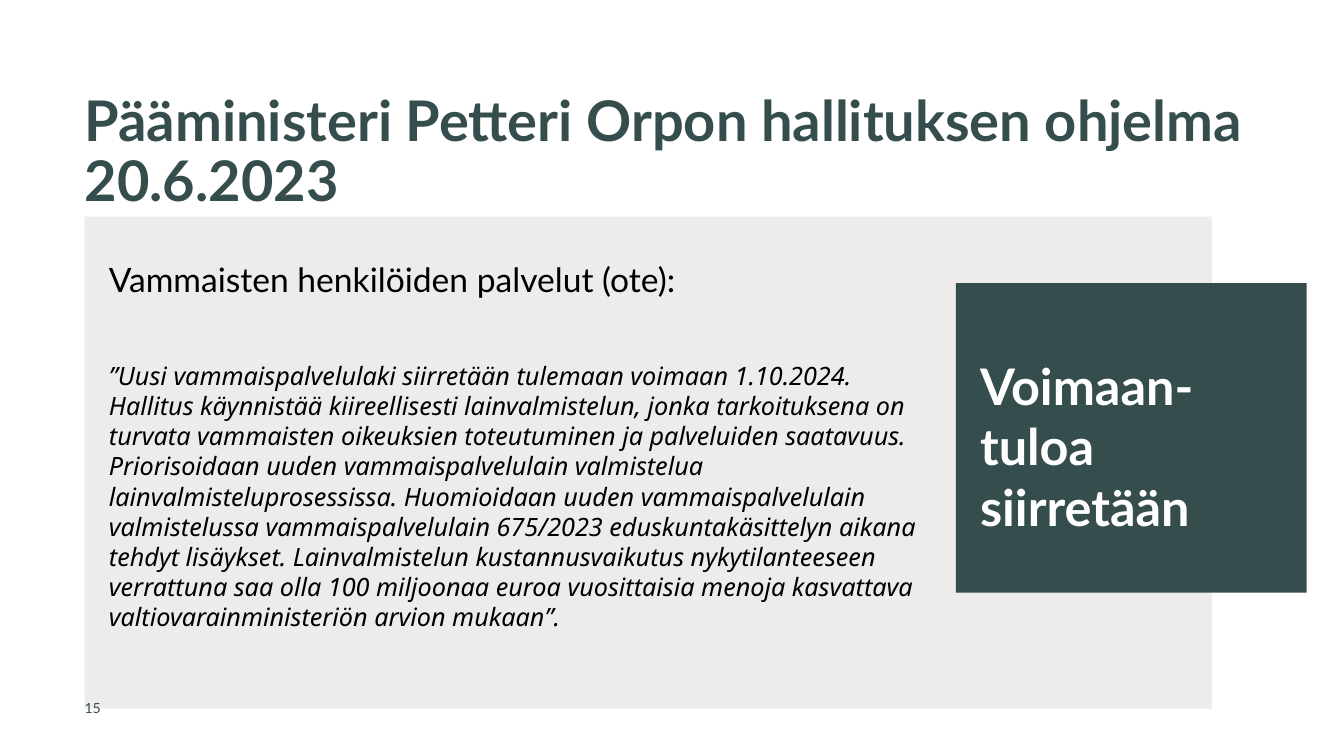
"""Builds the slide on the government programme and disability services."""
from dataclasses import dataclass

from lxml import etree
from pptx import Presentation
from pptx.dml.color import RGBColor
from pptx.enum.shapes import MSO_SHAPE
from pptx.enum.text import MSO_ANCHOR, PP_ALIGN
from pptx.oxml.ns import qn
from pptx.util import Inches, Pt

RECTANGLE = MSO_SHAPE.RECTANGLE
TOP, MIDDLE = MSO_ANCHOR.TOP, MSO_ANCHOR.MIDDLE
LEFT = PP_ALIGN.LEFT
TITLE_ONLY = 5


@dataclass(frozen=True)
class Theme:
    """Colours, fonts and type sizes."""
    green: str = "354D4C"
    sand: str = "DFDAD6"
    black: str = "000000"
    white: str = "FFFFFF"
    main_font: str = "Lato"
    quote_font: str = "Noto Sans"
    title: int = 40
    callout: int = 36
    heading: int = 24
    quote: int = 18
    number: int = 10


def write(shape, text, *, size, color, font, bold=False, italic=False,
          spacing=1.0, insets=(0, 0, 0, 0), anchor=TOP):
    """Put formatted text into a shape."""
    frame = shape.text_frame
    frame.word_wrap = True
    frame.vertical_anchor = anchor
    (frame.margin_left, frame.margin_top,
     frame.margin_right, frame.margin_bottom) = map(Inches, insets)
    para = frame.paragraphs[0]
    para.alignment = LEFT
    para.line_spacing = spacing
    para.space_before = Pt(0)
    span = para.add_run()
    span.text = text
    span.font.name = font
    span.font.size = Pt(size)
    span.font.bold = bold
    span.font.italic = italic
    span.font.color.rgb = RGBColor.from_string(color)


class Page:
    """Holds the theme and the current slide."""

    def __init__(self, deck, theme):
        self.theme = theme
        self.slide = deck.slides.add_slide(deck.slide_layouts[TITLE_ONLY])

    def title(self, text, place):
        """Move and fill the title placeholder."""
        box = self.slide.shapes.title
        box.left, box.top, box.width, box.height = map(Inches, place)
        write(box, text, size=self.theme.title, color=self.theme.green,
              font=self.theme.main_font, bold=True, spacing=0.9)

    def panel(self, text, place, fill, opacity=100, **style):
        """Add a filled rectangle with text."""
        box = self.slide.shapes.add_shape(RECTANGLE, *map(Inches, place))
        box.shadow.inherit = False
        box.line.fill.background()
        box.fill.solid()
        box.fill.fore_color.rgb = RGBColor.from_string(fill)
        if opacity < 100:
            color = box.fill._xPr.find(".//" + qn("a:srgbClr"))
            etree.SubElement(color, qn("a:alpha"), val=str(opacity * 1000))
        write(box, text, **style)

    def text(self, text, place, **style):
        """Add a text box."""
        box = self.slide.shapes.add_textbox(*map(Inches, place))
        write(box, text, font=self.theme.main_font, **style)


def main():
    """Build and save the deck."""
    theme = Theme()
    deck = Presentation()
    deck.slide_width, deck.slide_height = Inches(13.33), Inches(7.5)
    page = Page(deck, theme)

    page.title("Pääministeri Petteri Orpon hallituksen ohjelma 20.6.2023",
               (0.84, 0.92, 11.66, 1.1))
    page.panel(
        "”Uusi vammaispalvelulaki siirretään tulemaan voimaan 1.10.2024. "
        "Hallitus käynnistää kiireellisesti lainvalmistelun, jonka "
        "tarkoituksena on turvata vammaisten oikeuksien toteutuminen ja "
        "palveluiden saatavuus. Priorisoidaan uuden vammaispalvelulain "
        "valmistelua lainvalmisteluprosessissa. Huomioidaan uuden "
        "vammaispalvelulain valmistelussa vammaispalvelulain 675/2023 "
        "eduskuntakäsittelyn aikana tehdyt lisäykset. Lainvalmistelun "
        "kustannusvaikutus nykytilanteeseen verrattuna saa olla 100 "
        "miljoonaa euroa vuosittaisia menoja kasvattava "
        "valtiovarainministeriön arvion mukaan”.",
        (0.84, 2.15, 11.18, 4.88), theme.sand, opacity=50,
        size=theme.quote, color=theme.black, font=theme.quote_font,
        italic=True, insets=(0.24, 1.42, 2.76, 0.24))
    page.text("Vammaisten henkilöiden palvelut (ote):",
              (1.08, 2.57, 8.03, 0.48),
              size=theme.heading, color=theme.black)
    page.text("15", (0.84, 6.9, 0.47, 0.24),
              size=theme.number, color=theme.green, anchor=MIDDLE)
    page.panel("Voimaan-tuloa siirretään", (9.48, 2.81, 3.48, 3.07),
               theme.green, size=theme.callout, color=theme.white,
               font=theme.main_font, bold=True,
               insets=(0.24, 0.71, 0.24, 0.71))
    deck.save("out.pptx")


if __name__ == "__main__":
    main()
